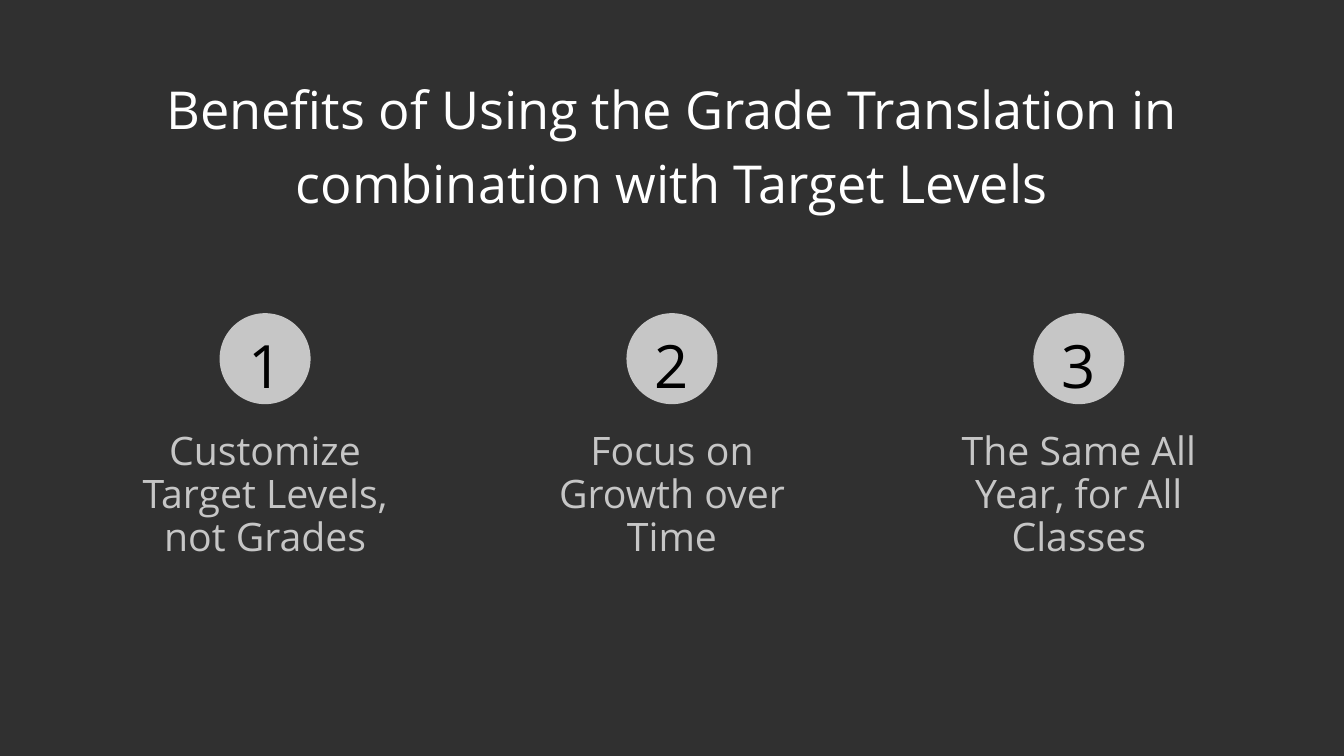
from pptx import Presentation
from pptx.dml.color import RGBColor
from pptx.enum.shapes import MSO_SHAPE as Shape
from pptx.enum.text import MSO_AUTO_SIZE as AutoSize, PP_ALIGN as Align
from pptx.util import Cm, Pt

COLORS = {
    "background": "303030",
    "title": "FFFFFF",
    "muted": "C6C6C6",
    "number": "000000",
}
FONT = "Open Sans"
SLIDE_WIDTH = 50.8
COLUMN_PITCH = 15.38
CIRCLE_SIZE = 3.44
TITLE = "Benefits of Using the Grade Translation in combination with Target Levels"
BENEFITS = [
    ("Customize Target Levels, not Grades", 10.7),
    ("Focus on Growth over Time", 11.35),
    ("The Same All Year, for All Classes", 11.35),
]


def color(name):
    return RGBColor.from_string(COLORS[name])


def add_centered_text(slide, text, center, top, width, height, size, leading, tone):
    box = slide.shapes.add_textbox(
        Cm(center - width / 2), Cm(top), Cm(width), Cm(height)
    )
    frame = box.text_frame
    frame.margin_left = frame.margin_right = 0
    frame.margin_top = frame.margin_bottom = 0
    frame.word_wrap = True
    frame.auto_size = AutoSize.SHAPE_TO_FIT_TEXT
    frame.text = text
    line = frame.paragraphs[0]
    line.alignment = Align.CENTER
    line.line_spacing = Pt(leading)
    font = line.runs[0].font
    font.name = FONT
    font.size = Pt(size)
    font.color.rgb = color(tone)


def add_circle(slide, center, top):
    circle = slide.shapes.add_shape(
        Shape.OVAL,
        Cm(center - CIRCLE_SIZE / 2), Cm(top), Cm(CIRCLE_SIZE), Cm(CIRCLE_SIZE),
    )
    circle.shadow.inherit = False
    circle.fill.solid()
    circle.fill.fore_color.rgb = color("muted")
    circle.line.fill.background()


def add_benefit(slide, number, label, label_width):
    center = SLIDE_WIDTH / 2 + (number - 2) * COLUMN_PITCH
    add_circle(slide, center, 11.84)
    add_centered_text(
        slide, str(number), center, 11.58, CIRCLE_SIZE, 3.33, 64, 100.5, "number"
    )
    add_centered_text(
        slide, label, center, 16.26, label_width, 4.88, 42, 46.2, "muted"
    )


def main():
    deck = Presentation()
    deck.slide_width = Cm(SLIDE_WIDTH)
    deck.slide_height = Cm(28.58)
    slide = deck.slides.add_slide(deck.slide_layouts[6])
    slide.background.fill.solid()
    slide.background.fill.fore_color.rgb = color("background")

    add_centered_text(
        slide, TITLE, SLIDE_WIDTH / 2, 2.54, 39.3, 5.44, 56, 78.4, "title"
    )
    for number, (label, label_width) in enumerate(BENEFITS, start=1):
        add_benefit(slide, number, label, label_width)

    deck.save("out.pptx")


if __name__ == "__main__":
    main()
